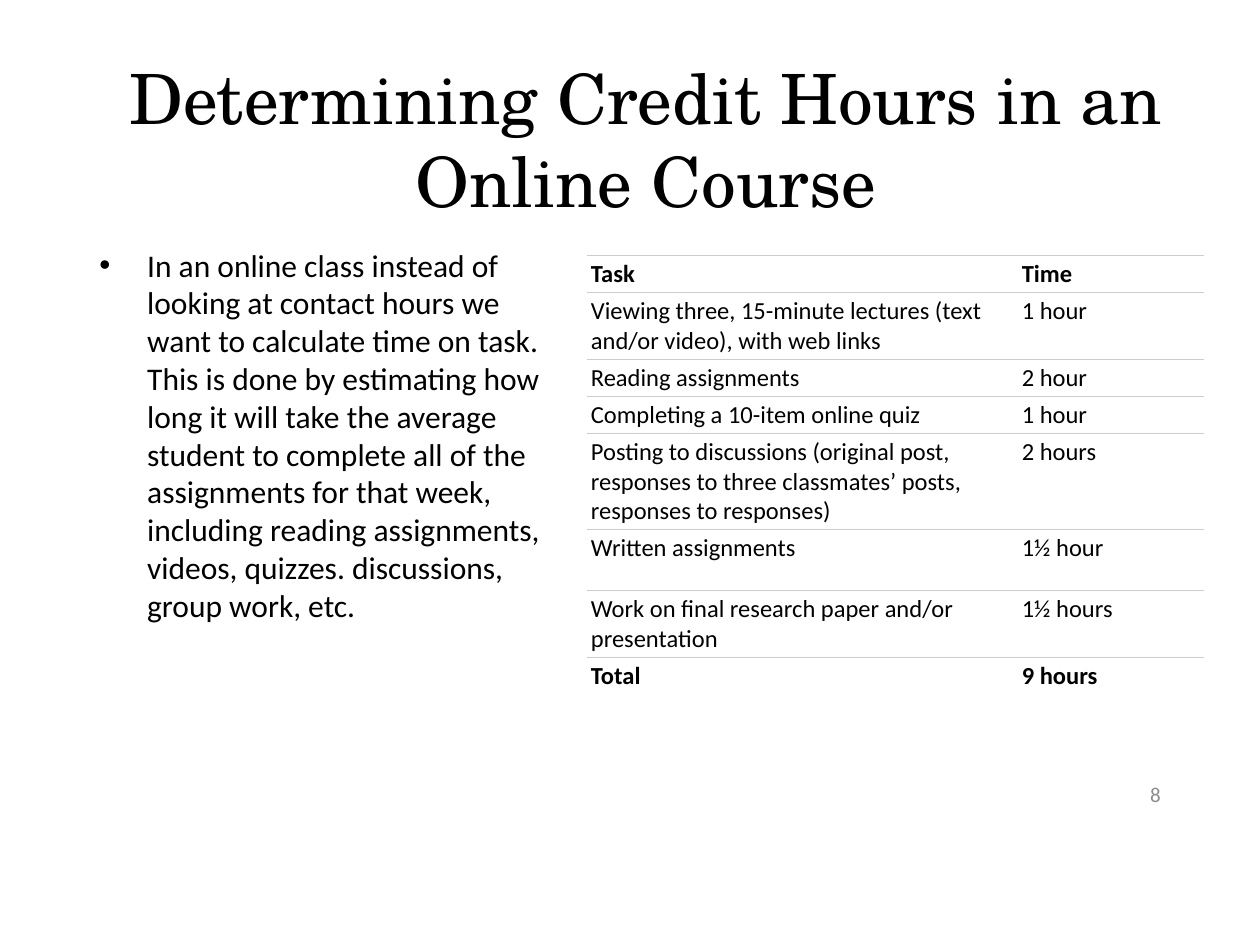
from lxml import etree
from pptx import Presentation
from pptx.dml.color import RGBColor
from pptx.enum import text as tx
from pptx.oxml.ns import qn
from pptx.util import Inches, Pt

SANS, SERIF = "Calibri", "TeX Gyre Schola"
BLACK, GREY, RULE, WHITE = "000000", "8C8C8C", "CCCCCC", "FFFFFF"

TITLE = "Determining Credit Hours in an Online Course"
BODY = (
    "In an online class instead of looking at contact hours we want to "
    "calculate time on task. This is done by estimating how long it will "
    "take the average student to complete all of the assignments for that "
    "week, including reading assignments, videos, quizzes. discussions, "
    "group work, etc."
)
# Task, time, row height
TASKS = [
    ("Task", "Time", 0.28),
    ("Viewing three, 15-minute lectures (text and/or video), with web links",
     "1 hour", 0.5),
    ("Reading assignments", "2 hour", 0.28),
    ("Completing a 10-item online quiz", "1 hour", 0.28),
    ("Posting to discussions (original post, responses to three classmates’ "
     "posts, responses to responses)", "2 hours", 0.73),
    ("Written assignments", "1½ hour", 0.49),
    ("Work on final research paper and/or presentation", "1½ hours", 0.5),
    ("Total", "9 hours", 0.28),
]


def color(code):
    return RGBColor.from_string(code)


def write(frame, words, size=14, font=SANS, ink=BLACK, bold=False,
          align=tx.PP_ALIGN.LEFT, bullet=None, indent=0):
    frame.word_wrap = True
    para = frame.paragraphs[0]
    if bullet:
        props = para._p.get_or_add_pPr()
        props.set("marL", str(Inches(indent)))
        props.set("indent", str(-Inches(indent)))
        etree.SubElement(props, qn("a:buFont"), typeface="Arial")
        etree.SubElement(props, qn("a:buChar"), char=bullet)
    para.alignment = align
    run = para.add_run()
    run.text = words
    run.font.size, run.font.name, run.font.bold = Pt(size), font, bold
    run.font.color.rgb = color(ink)


def add_title(slide, x, y, w, h):
    title = slide.shapes.title
    title.left, title.top, title.width, title.height = map(Inches, (x, y, w, h))
    frame = title.text_frame
    frame.auto_size = tx.MSO_AUTO_SIZE.NONE
    frame.vertical_anchor = tx.MSO_ANCHOR.MIDDLE
    write(frame, TITLE, size=39.6, font=SERIF, align=tx.PP_ALIGN.CENTER)


def add_body(slide, x, y, w, h):
    box = slide.shapes.add_textbox(*map(Inches, (x, y, w, h)))
    write(box.text_frame, BODY, size=18, bullet="•", indent=0.38)


def add_page(slide, x, y, w, h):
    box = slide.shapes.add_textbox(*map(Inches, (x, y, w, h)))
    box.text_frame.vertical_anchor = tx.MSO_ANCHOR.MIDDLE
    write(box.text_frame, "8", size=12, ink=GREY, align=tx.PP_ALIGN.RIGHT)


def rule(cell, sides):
    """Draw thin lines on the named sides and clear the others."""
    props = cell._tc.get_or_add_tcPr()
    for i, side in enumerate("LRTB"):
        line = etree.Element(qn("a:ln" + side), w=str(Pt(0.5)))
        if side in sides:
            fill = etree.SubElement(line, qn("a:solidFill"))
            etree.SubElement(fill, qn("a:srgbClr"), val=RULE)
        else:
            etree.SubElement(line, qn("a:noFill"))
        props.insert(i, line)


def add_tasks(slide, x, y, w, h):
    last = len(TASKS) - 1
    grid = slide.shapes.add_table(
        len(TASKS), 2, *map(Inches, (x, y, w, h))).table
    grid.horz_banding = False
    grid.columns[0].width = Inches(3.42)
    grid.columns[1].width = Inches(w - 3.42)
    for r, (task, time, tall) in enumerate(TASKS):
        grid.rows[r].height = Inches(tall)
        for c, words in enumerate((task, time)):
            cell = grid.cell(r, c)
            cell.margin_left = cell.margin_right = Inches(0.03)
            cell.margin_top = cell.margin_bottom = Inches(0.03)
            cell.vertical_anchor = (
                tx.MSO_ANCHOR.TOP if r else tx.MSO_ANCHOR.MIDDLE)
            cell.fill.solid()
            cell.fill.fore_color.rgb = color(WHITE)
            rule(cell, "T" if r == last else "TB")
            write(cell.text_frame, words, bold=r in (0, last))


def main():
    deck = Presentation()
    deck.slide_width, deck.slide_height = Inches(10), Inches(7.5)
    slide = deck.slides.add_slide(deck.slide_layouts[5])
    add_title(slide, 0.73, 0.67, 8.79, 0.86)
    add_page(slide, 7.06, 6.15, 2.25, 0.3)
    add_body(slide, 0.69, 1.9, 3.8, 3.28)
    add_tasks(slide, 4.66, 2.03, 4.9, 3.41)
    deck.save("out.pptx")


if __name__ == "__main__":
    main()
